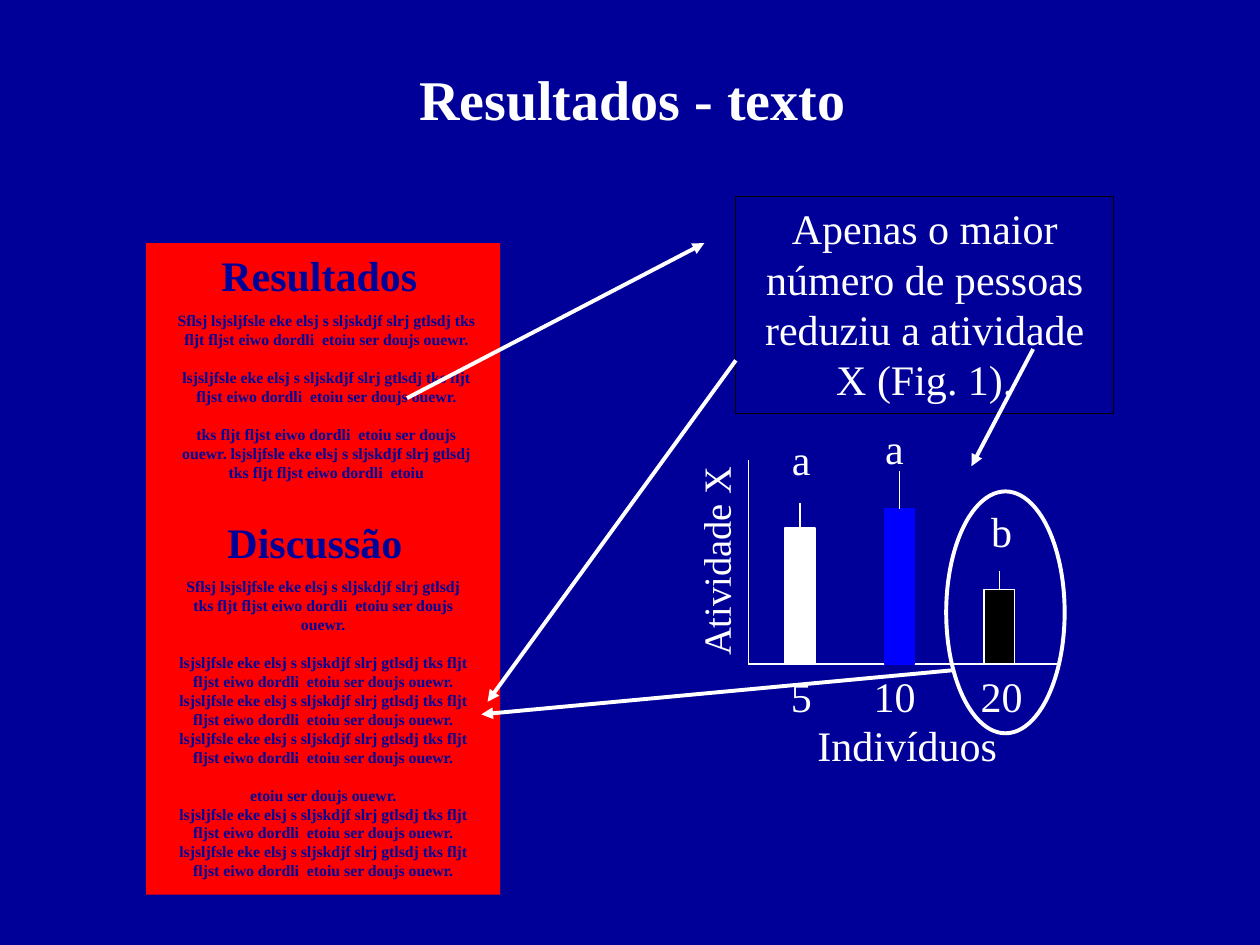
import dataclasses
import typing

import lxml.etree
import pptx
import pptx.dml.color
import pptx.enum.shapes
import pptx.enum.text
import pptx.oxml.ns
import pptx.util

Inches = pptx.util.Inches
Pt = pptx.util.Pt
RGB = pptx.dml.color.RGBColor
Kind = pptx.enum.shapes.MSO_SHAPE
qn = pptx.oxml.ns.qn


@dataclasses.dataclass(frozen=True)
class Theme:
    font: str = "Times New Roman"
    navy: str = "000099"
    white: str = "FFFFFF"
    red: str = "FF0000"
    blue: str = "0000FF"
    black: str = "000000"
    title: float = 32
    head: float = 24
    axis: float = 22
    small: float = 9
    gap: float = 10.8
    thin: float = 0.75
    thick: float = 2.25


class Box(typing.NamedTuple):
    left: float
    top: float
    width: float
    height: float


class Para(typing.NamedTuple):
    text: str
    gap: float = 0


class Bar(typing.NamedTuple):
    name: str
    mark: str
    top: float
    tip: float
    mark_mid: float
    mark_top: float
    fill: str
    line: str


class Arrow(typing.NamedTuple):
    x1: float
    y1: float
    x2: float
    y2: float


T = Theme()
BASE = 5.27
BAR_LEFT, BAR_STEP, BAR_WIDTH = 6.23, 0.79, 0.24
LABEL = 0.51

CORE = "lsjsljfsle eke elsj s sljskdjf slrj gtlsdj tks fljt fljst eiwo dordli  etoiu"
FULL = CORE + " ser doujs ouewr."
OPEN = Para("Sflsj " + FULL)

RESULTS = [
    OPEN,
    Para(FULL, T.gap),
    Para("tks fljt fljst eiwo dordli  etoiu ser doujs ouewr. " + CORE, T.gap),
]
DEBATE = [
    OPEN,
    Para(FULL, T.gap),
    Para(FULL),
    Para(FULL),
    Para("etoiu ser doujs ouewr.", T.gap),
    Para(FULL),
    Para(FULL),
]
BARS = [
    Bar("5", "a", 4.19, 3.99, 6.36, 3.39, T.white, T.white),
    Bar("10", "a", 4.04, 3.74, 7.1, 3.3, T.blue, T.blue),
    Bar("20", "b", 4.68, 4.53, 7.95, 3.96, T.black, T.white),
]
ARROWS = [
    Arrow(3.23, 3.16, 5.59, 1.93),
    Arrow(7.56, 5.32, 3.82, 5.67),
    Arrow(5.84, 2.86, 3.87, 5.57),
]


def rgb(code: str) -> RGB:
    return RGB.from_string(code)


def write(frame, paras: list[Para], size: float, color: str,
          bold: bool = False, wrap: bool = True) -> None:
    frame.word_wrap = wrap
    frame.vertical_anchor = pptx.enum.text.MSO_ANCHOR.TOP
    for i, item in enumerate(paras):
        para = frame.add_paragraph() if i else frame.paragraphs[0]
        para.alignment = pptx.enum.text.PP_ALIGN.CENTER
        para.space_before = Pt(item.gap)
        run = para.add_run()
        run.text = item.text
        run.font.name = T.font
        run.font.size = Pt(size)
        run.font.bold = bold
        run.font.color.rgb = rgb(color)


def add_text(slide, box: Box, paras: list[Para], size: float = T.head,
             color: str = T.white, bold: bool = False, wrap: bool = False):
    shape = slide.shapes.add_textbox(*map(Inches, box))
    write(shape.text_frame, paras, size, color, bold, wrap)
    return shape


def add_label(slide, text: str, mid: float, top: float, width: float) -> None:
    add_text(slide, Box(mid - width / 2, top, width, LABEL), [Para(text)])


def add_shape(slide, kind: Kind, box: Box, fill: str | None = None,
              line: str | None = None, weight: float = T.thin):
    shape = slide.shapes.add_shape(kind, *map(Inches, box))
    shape.shadow.inherit = False
    if fill:
        shape.fill.solid()
        shape.fill.fore_color.rgb = rgb(fill)
    else:
        shape.fill.background()
    if line:
        shape.line.color.rgb = rgb(line)
        shape.line.width = Pt(weight)
    else:
        shape.line.fill.background()
    return shape


def add_line(slide, ends: Arrow, weight: float = T.thin, head: bool = False):
    line = slide.shapes.add_connector(
        pptx.enum.shapes.MSO_CONNECTOR.STRAIGHT, *map(Inches, ends))
    line.line.color.rgb = rgb(T.white)
    line.line.width = Pt(weight)
    props = line._element.spPr
    if head:
        lxml.etree.SubElement(props.find(qn("a:ln")), qn("a:tailEnd"), type="triangle")
    lxml.etree.SubElement(props, qn("a:effectLst"))
    return line


def add_bar(slide, bar: Bar, left: float) -> None:
    mid = left + BAR_WIDTH / 2
    shape = add_shape(slide, Kind.RECTANGLE,
                      Box(left, bar.top, BAR_WIDTH, BASE - bar.top), bar.fill, bar.line)
    stem = add_line(slide, Arrow(mid, bar.top, mid, bar.tip))
    stem.begin_connect(shape, 0)
    add_label(slide, bar.mark, bar.mark_mid, bar.mark_top, 0.4)
    add_label(slide, bar.name, bar.mark_mid, 5.27, 0.7)


def add_page(slide) -> None:
    add_shape(slide, Kind.RECTANGLE, Box(1.16, 1.93, 2.81, 5.17), T.red)
    add_text(slide, Box(1.31, 2.42, 2.56, 1.77), RESULTS, T.small, T.navy, True, True)
    add_text(slide, Box(1.31, 4.53, 2.51, 2.68), DEBATE, T.small, T.navy, True, True)
    add_text(slide, Box(1.65, 1.93, 1.77, LABEL), [Para("Resultados")], T.head, T.navy, True)
    add_text(slide, Box(1.7, 4.05, 1.6, LABEL), [Para("Discussão")], T.head, T.navy, True)


def add_graph(slide) -> None:
    add_shape(slide, Kind.OVAL, Box(7.51, 3.9, 0.94, 1.92), None, T.white, T.thick)
    add_line(slide, Arrow(5.94, 3.65, 5.94, BASE))
    add_line(slide, Arrow(5.94, BASE, 8.4, BASE))
    for i, bar in enumerate(BARS):
        add_bar(slide, bar, BAR_LEFT + i * BAR_STEP)
    add_label(slide, "Indivíduos", 7.2, 5.66, 2.05)
    axis = add_text(slide, Box(4.82, 4.22, 1.72, 0.47), [Para("Atividade X")], T.axis)
    axis.rotation = 270


def main() -> None:
    deck = pptx.Presentation()
    deck.slide_width, deck.slide_height = Inches(10), Inches(7.5)
    slide = deck.slides.add_slide(deck.slide_layouts[6])
    slide.background.fill.solid()
    slide.background.fill.fore_color.rgb = rgb(T.navy)

    add_text(slide, Box(3.21, 0.46, 3.62, 0.64), [Para("Resultados - texto")],
             T.title, bold=True)
    add_page(slide)
    note = add_shape(slide, Kind.RECTANGLE, Box(5.84, 1.56, 3, 1.72), None, T.black)
    write(note.text_frame,
          [Para("Apenas o maior número de pessoas reduziu a atividade X (Fig. 1).")],
          T.head, T.white)
    for ends in ARROWS:
        add_line(slide, ends, T.thick, True)
    add_graph(slide)
    add_line(slide, Arrow(8.2, 2.77, 7.71, 3.7), T.thick, True)
    deck.save("out.pptx")


if __name__ == "__main__":
    main()
